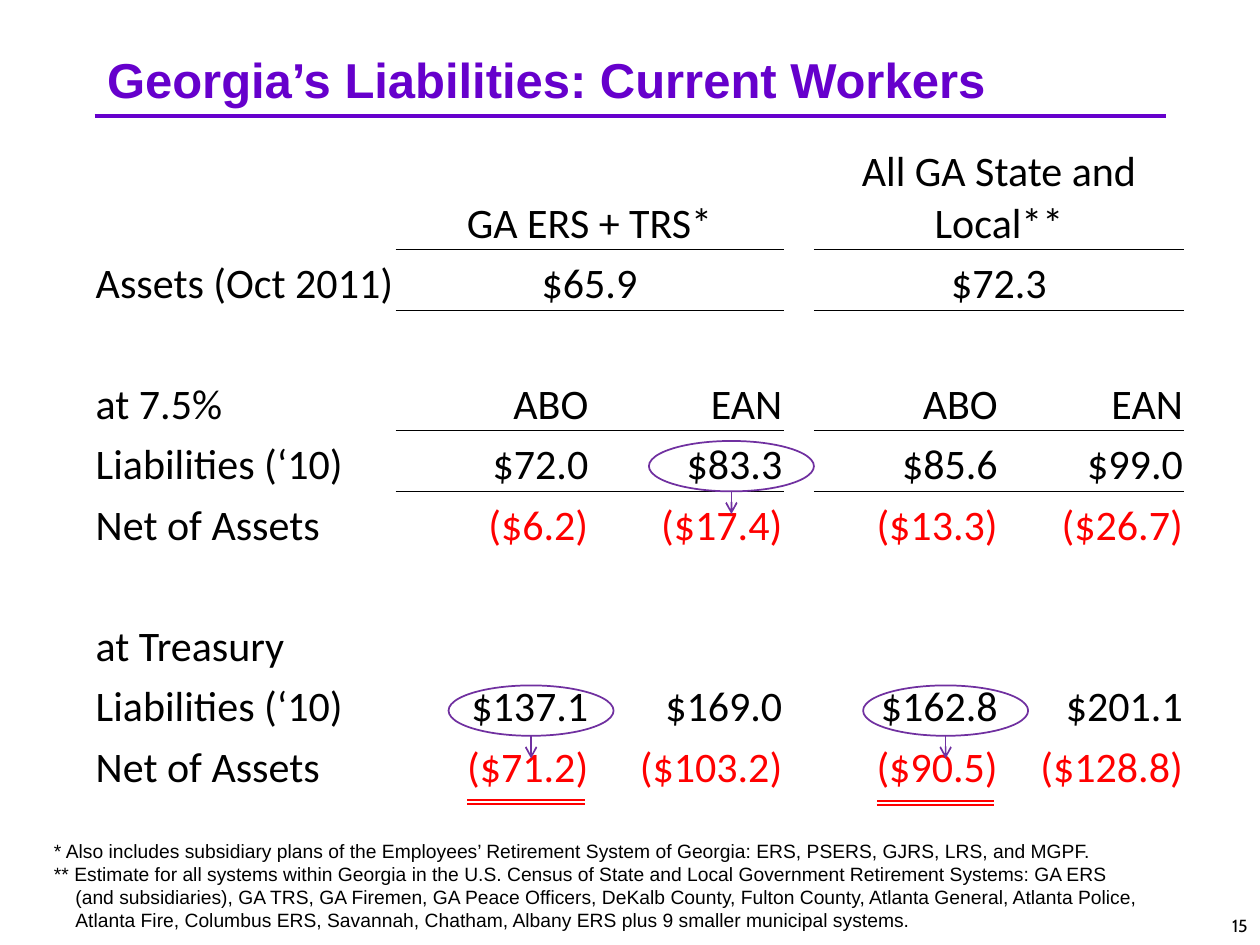
"""Build the slide on Georgia's pension liabilities for current workers."""
from dataclasses import dataclass

import lxml.etree
import pptx
import pptx.dml.color
import pptx.enum.shapes
import pptx.enum.text
import pptx.oxml.ns
import pptx.util

Inches = pptx.util.Inches
Align = pptx.enum.text.PP_ALIGN
Anchor = pptx.enum.text.MSO_ANCHOR
qn = pptx.oxml.ns.qn


@dataclass(frozen=True)
class Theme:
    accent: str = "6600CC"
    mark: str = "7030A0"
    negative: str = "FF0000"
    ink: str = "000000"
    title_size: float = 28
    table_size: float = 24
    note_size: float = 11
    number_size: float = 10
    heading_font: str = "Arial"
    table_font: str = "Calibri"
    number_font: str = "Cabin"


THEME = Theme()
PLAIN_TABLE = "{2D5ABB26-0587-4C30-8999-92F81FD0307C}"
COLUMNS = (1.62, 0.61, 0.16, 1.54, 1.54, 0.24, 1.47, 1.47)
HEADER_HEIGHT, ROW_HEIGHT = 0.96, 0.48
VALUE_COLUMNS = (3, 4, 6, 7)
GROUP_COLUMNS = (3, 6)
RULED_ROWS = (0, 3)
ROWS = (
    ("", ("GA ERS + TRS*", "All GA State and Local**")),
    ("Assets (Oct 2011)", ("$65.9", "$72.3")),
    ("", ()),
    ("at 7.5%", ("ABO", "EAN", "ABO", "EAN")),
    ("Liabilities (‘10)", ("$72.0", "$83.3", "$85.6", "$99.0")),
    ("Net of Assets", ("($6.2)", "($17.4)", "($13.3)", "($26.7)")),
    ("", ()),
    ("at Treasury", ()),
    ("Liabilities (‘10)", ("$137.1", "$169.0", "$162.8", "$201.1")),
    ("Net of Assets", ("($71.2)", "($103.2)", "($90.5)", "($128.8)")),
)
NOTES = (
    (0, 0, ("* Also includes subsidiary plans of the Employees’ Retirement System of "
            "Georgia: ERS, PSERS, GJRS, LRS, and MGPF.",)),
    (0.17, -0.17, ("** Estimate for all systems within Georgia in the U.S. Census of State and "
                   "Local Government Retirement Systems: GA ERS",
                   "(and subsidiaries), GA TRS, GA Firemen, GA Peace Officers, DeKalb County, "
                   "Fulton County, Atlanta General, Atlanta Police,")),
    (0.17, 0, ("Atlanta Fire, Columbus ERS, Savannah, Chatham, Albany ERS plus 9 smaller "
               "municipal systems.",)),
)
CIRCLES = ((3.56, 5.44), (5.15, 3.5), (6.85, 5.44))
UNDERLINES = ((3.71, 6.35), (6.96, 6.36))


def rgb(value):
    """Return a colour object for a hex string."""
    return pptx.dml.color.RGBColor.from_string(value)


def add_span(para, text, font, size, color=THEME.ink, bold=False):
    """Add one formatted run to a paragraph."""
    span = para.add_run()
    span.text = text
    span.font.name = font
    span.font.size = pptx.util.Pt(size)
    span.font.bold = bold
    span.font.color.rgb = rgb(color)


def add_line(page, start, end, color, width=1, arrow=False):
    """Draw a straight line, with an open arrowhead if asked."""
    line = page.shapes.add_connector(
        pptx.enum.shapes.MSO_CONNECTOR.STRAIGHT, *map(Inches, start + end))
    line.line.color.rgb = rgb(color)
    line.line.width = pptx.util.Pt(width)
    if arrow:
        lxml.etree.SubElement(line.line._get_or_add_ln(), qn("a:tailEnd"), type="arrow")
    lxml.etree.SubElement(line._element.spPr, qn("a:effectLst"))


def add_title(page):
    """Place the title and the rule beneath it."""
    add_line(page, (0.75, 0.92), (9.25, 0.92), THEME.accent, 2.25)
    title = page.shapes.title
    title.left, title.top, title.width, title.height = map(Inches, (0.75, 0.17, 8.5, 0.92))
    title.text_frame.vertical_anchor = Anchor.MIDDLE
    para = title.text_frame.paragraphs[0]
    para.alignment = Align.LEFT
    add_span(para, "Georgia’s Liabilities: Current Workers", THEME.heading_font,
             THEME.title_size, THEME.accent, True)


def add_border(cell, side):
    """Draw a thin rule on one side of a cell."""
    line = lxml.etree.Element(qn("a:" + side), w=str(pptx.util.Pt(0.5)))
    fill = lxml.etree.SubElement(line, qn("a:solidFill"))
    lxml.etree.SubElement(fill, qn("a:srgbClr"), val=THEME.ink)
    cell._tc.get_or_add_tcPr().insert(0, line)


def write_cell(cell, text, alignment):
    """Write text in a cell, with bracketed amounts in the negative colour."""
    para = cell.text_frame.paragraphs[0]
    para.alignment = alignment
    color = THEME.negative if text.startswith("(") else THEME.ink
    add_span(para, text, THEME.table_font, THEME.table_size, color)


def fill_row(table, index, label, values):
    """Merge and write the cells of one table row."""
    first, last = {0: (1, 2), 1: (0, 2)}.get(index, (0, 1))
    table.cell(index, first).merge(table.cell(index, last))
    if label:
        write_cell(table.cell(index, 0), label, Align.LEFT)
    grouped = len(values) == len(GROUP_COLUMNS)
    for column, text in zip(GROUP_COLUMNS if grouped else VALUE_COLUMNS, values):
        cell = table.cell(index, column)
        if grouped:
            cell.merge(table.cell(index, column + 1))
        write_cell(cell, text, Align.CENTER if grouped else Align.RIGHT)


def add_liabilities(page):
    """Build the table of assets and liabilities."""
    heights = [HEADER_HEIGHT] + [ROW_HEIGHT] * (len(ROWS) - 1)
    frame = page.shapes.add_table(
        len(ROWS), len(COLUMNS), Inches(0.75), Inches(1.02),
        Inches(sum(COLUMNS)), Inches(sum(heights)))
    table = frame.table
    table.first_row = table.horz_banding = False
    table._tbl.tblPr.find(qn("a:tableStyleId")).text = PLAIN_TABLE
    for column, width in zip(table.columns, COLUMNS):
        column.width = Inches(width)
    for row, height in zip(table.rows, heights):
        row.height = Inches(height)
    for cell in table.iter_cells():
        cell.fill.background()
        cell.vertical_anchor = Anchor.BOTTOM
        cell.margin_left = cell.margin_right = cell.margin_top = Inches(0.01)
        cell.margin_bottom = 0
    for index, (label, values) in enumerate(ROWS):
        fill_row(table, index, label, values)
    for index in RULED_ROWS:
        for column in VALUE_COLUMNS:
            add_border(table.cell(index, column), "lnB")
            add_border(table.cell(index + 1, column), "lnT")


def add_circle(page, left, top):
    """Ring a liability and point from it to the net figure below."""
    width, height = 1.31, 0.4
    ring = page.shapes.add_shape(
        pptx.enum.shapes.MSO_SHAPE.OVAL, *map(Inches, (left, top, width, height)))
    ring.shadow.inherit = False
    ring.fill.background()
    ring.line.color.rgb = rgb(THEME.mark)
    ring.line.width = pptx.util.Pt(1)
    middle, bottom = left + width / 2, top + height
    add_line(page, (middle, bottom), (middle, bottom + 0.18), THEME.mark, arrow=True)


def add_underline(page, left, top):
    """Draw a double rule under a net figure."""
    for level in (top, top + 0.03):
        add_line(page, (left, level), (left + 0.93, level), THEME.negative)


def add_box(page, *place):
    """Add a wrapping text box and return its text frame."""
    box = page.shapes.add_textbox(*map(Inches, place))
    box.text_frame.word_wrap = True
    return box.text_frame


def add_notes(page):
    """Write the footnotes with hanging indents."""
    frame = add_box(page, 0.33, 6.61, 9.02, 1.03)
    for index, (margin, indent, lines) in enumerate(NOTES):
        para = frame.add_paragraph() if index else frame.paragraphs[0]
        properties = para._p.get_or_add_pPr()
        properties.set("marL", str(Inches(margin)))
        properties.set("indent", str(Inches(indent)))
        for number, text in enumerate(lines):
            if number:
                para.add_line_break()
            add_span(para, text, THEME.heading_font, THEME.note_size)


def add_page_number(page):
    """Write the page number in the lower right corner."""
    para = add_box(page, 7.92, 7.21, 2.08, 0.5).paragraphs[0]
    para.alignment = Align.RIGHT
    add_span(para, "15", THEME.number_font, THEME.number_size)


def main():
    """Assemble and save the deck."""
    deck = pptx.Presentation()
    deck.slide_width, deck.slide_height = Inches(10), Inches(7.5)
    page = deck.slides.add_slide(deck.slide_layouts.get_by_name("Title Only"))
    add_title(page)
    add_liabilities(page)
    add_page_number(page)
    for place in CIRCLES:
        add_circle(page, *place)
    for place in UNDERLINES:
        add_underline(page, *place)
    add_notes(page)
    deck.save("out.pptx")


if __name__ == "__main__":
    main()
